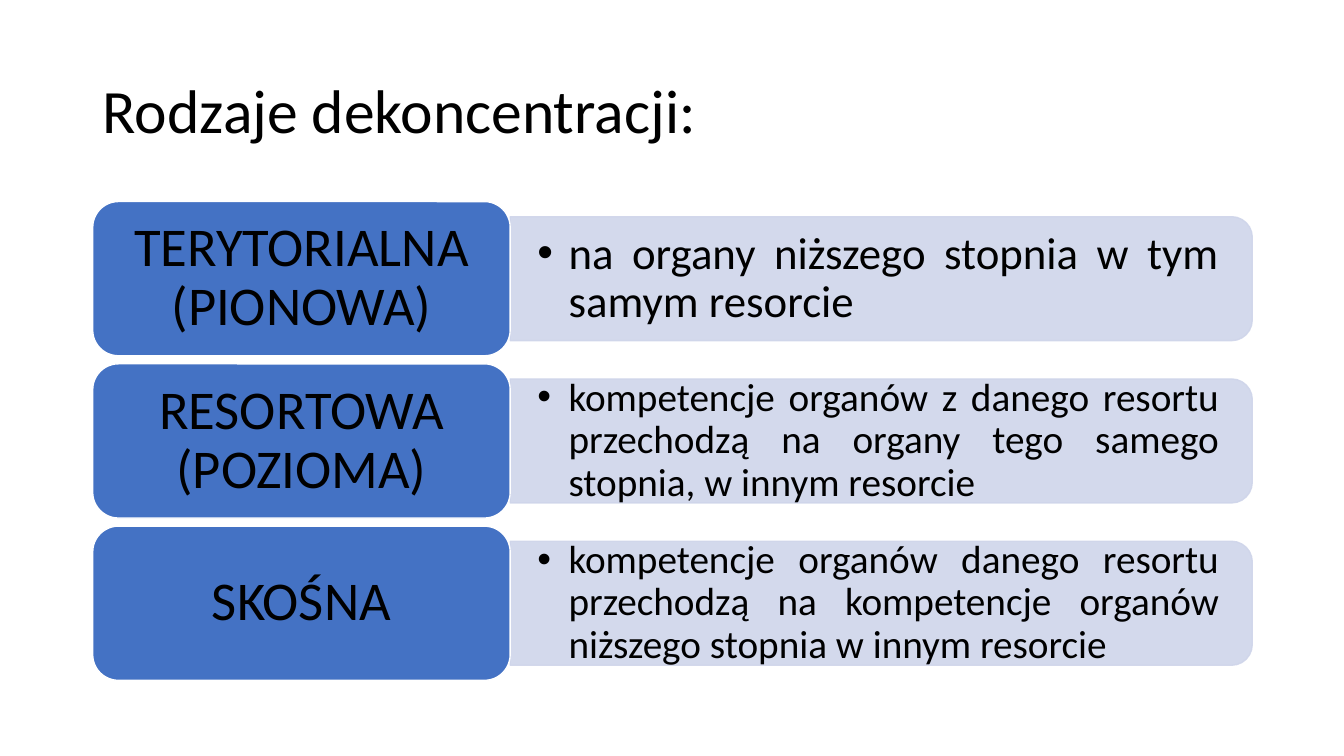
import pptx
import pptx.dml.color
import pptx.enum.shapes
import pptx.enum.text
import pptx.oxml.ns
import pptx.util
from lxml import etree

SLIDE_WIDTH, SLIDE_HEIGHT = 13.33, 7.5
LEFT, FIRST_ROW, ROW_PITCH = 0.92, 2.0, 1.61
LABEL_WIDTH, LABEL_HEIGHT = 4.14, 1.53
PANEL_WIDTH, PANEL_HEIGHT = 7.36, 1.23
PANEL_LEFT = LEFT + LABEL_WIDTH
DETAIL_WIDTH, DETAIL_HEIGHT = 7.3, 1.11
LABEL_SIZE = 39

KINDS = [
    ("TERYTORIALNA (PIONOWA)", "na organy niższego stopnia w tym samym resorcie", 32),
    ("RESORTOWA (POZIOMA)", "kompetencje organów z danego resortu przechodzą "
     "na organy tego samego stopnia, w innym resorcie", 28),
    ("SKOŚNA", "kompetencje organów danego resortu przechodzą "
     "na kompetencje organów niższego stopnia w innym resorcie", 28),
]


def color(value):
    return pptx.dml.color.RGBColor.from_string(value)


def inches(*lengths):
    return [pptx.util.Inches(length) for length in lengths]


def set_alpha(shape, percent):
    for element in shape._element.spPr.iter(pptx.oxml.ns.qn("a:srgbClr")):
        alpha = etree.SubElement(element, pptx.oxml.ns.qn("a:alpha"))
        alpha.set("val", str(percent * 1000))


def add_bullet(paragraph, indent):
    properties = paragraph._p.get_or_add_pPr()
    properties.set("marL", str(pptx.util.Inches(indent)))
    properties.set("indent", str(-pptx.util.Inches(indent)))
    etree.SubElement(properties, pptx.oxml.ns.qn("a:buFont")).set("typeface", "Arial")
    etree.SubElement(properties, pptx.oxml.ns.qn("a:buChar")).set("char", "•")


def write(shape, text, size, alignment, margins, bullet=False):
    frame = shape.text_frame
    frame.word_wrap = True
    frame.vertical_anchor = pptx.enum.text.MSO_ANCHOR.MIDDLE
    frame.margin_left, frame.margin_top = inches(*margins)
    frame.margin_right, frame.margin_bottom = inches(*margins)
    paragraph = frame.paragraphs[0]
    if bullet:
        add_bullet(paragraph, 0.31)
    paragraph.alignment = alignment
    paragraph.line_spacing = 0.9
    run = paragraph.add_run()
    run.text = text
    run.font.size = pptx.util.Pt(size)
    run.font.name = "Calibri"
    run.font.color.rgb = color("000000")


def add_block(slide, kind, box, fill, line):
    shape = slide.shapes.add_shape(kind, *inches(*box))
    shape.shadow.inherit = False
    shape.fill.solid()
    shape.fill.fore_color.rgb = color(fill)
    shape.line.color.rgb = color(line)
    shape.line.width = pptx.util.Pt(1)
    return shape


def add_text(slide, box, *text):
    write(slide.shapes.add_textbox(*inches(*box)), *text)


def add_kind(slide, row, label, detail, detail_size):
    shapes = pptx.enum.shapes.MSO_SHAPE
    align = pptx.enum.text.PP_ALIGN
    top = FIRST_ROW + row * ROW_PITCH
    middle = top + LABEL_HEIGHT / 2

    panel_box = (PANEL_LEFT + (PANEL_WIDTH - PANEL_HEIGHT) / 2,
                 middle - PANEL_WIDTH / 2, PANEL_HEIGHT, PANEL_WIDTH)
    panel = add_block(slide, shapes.ROUND_2_SAME_RECTANGLE, panel_box, "CFD5EA", "CFD5EA")
    panel.rotation = 90
    set_alpha(panel, 90)

    detail_box = (PANEL_LEFT, middle - DETAIL_HEIGHT / 2, DETAIL_WIDTH, DETAIL_HEIGHT)
    add_text(slide, detail_box, detail, detail_size, align.JUSTIFY, (0.27, 0.14), True)

    label_box = (LEFT, top, LABEL_WIDTH, LABEL_HEIGHT)
    block = add_block(slide, shapes.ROUNDED_RECTANGLE, label_box, "4472C4", "FFFFFF")
    write(block, label, LABEL_SIZE, align.CENTER, (0.16, 0.08))


def main():
    presentation = pptx.Presentation()
    presentation.slide_width, presentation.slide_height = inches(SLIDE_WIDTH, SLIDE_HEIGHT)
    slide = presentation.slides.add_slide(presentation.slide_layouts[6])
    add_text(slide, (LEFT, 0.4, SLIDE_WIDTH - 2 * LEFT, 1.45), "Rodzaje dekoncentracji:",
             44, pptx.enum.text.PP_ALIGN.LEFT, (0.1, 0.05))
    for row, kind in enumerate(KINDS):
        add_kind(slide, row, *kind)
    presentation.save("out.pptx")


if __name__ == "__main__":
    main()
